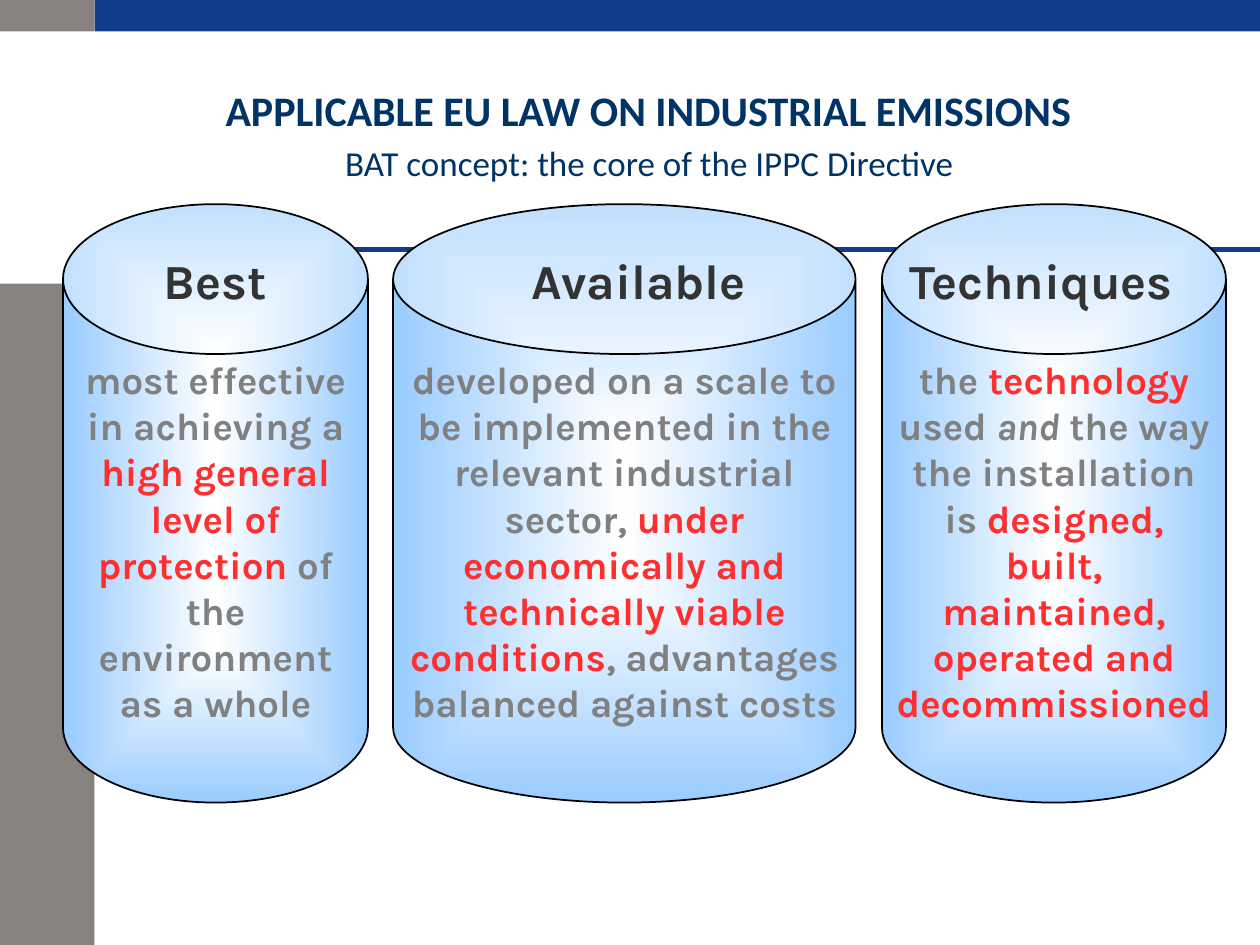
from lxml import etree
from pptx import Presentation
from pptx.dml.color import RGBColor
from pptx.enum.shapes import MSO_CONNECTOR, MSO_SHAPE
from pptx.enum.text import MSO_ANCHOR, MSO_AUTO_SIZE, PP_ALIGN
from pptx.oxml.ns import qn
from pptx.util import Inches, Pt

RECT, CAN = MSO_SHAPE.RECTANGLE, MSO_SHAPE.CAN
STRAIGHT = MSO_CONNECTOR.STRAIGHT
MIDDLE, TOP = MSO_ANCHOR.MIDDLE, MSO_ANCHOR.TOP
LEFT, CENTER = PP_ALIGN.LEFT, PP_ALIGN.CENTER
FIT, FIXED = MSO_AUTO_SIZE.SHAPE_TO_FIT_TEXT, MSO_AUTO_SIZE.NONE

WIDTH, HEIGHT = 10, 7.5
BAND, SIDEBAR, SIDEBAR_TOP, RULE_Y = 0.25, 0.75, 2.25, 1.98
CAN_TOP, CAN_HEIGHT, LID_HEIGHT = 1.62, 4.75, 1.19
LABEL_TOP, LABEL_HEIGHT = 1.94, 0.57

NAVY, BLUE, STONE = "003366", "133C8B", "88827E"
GREY, RED, DARK = "808080", "FF2F2F", "333333"
CAN_GRADIENT = ("FFFFFF", "99CCFF")

TITLE = "APPLICABLE EU LAW ON INDUSTRIAL EMISSIONS"
SUBTITLE = "BAT concept: the core of the IPPC Directive"

PILLARS = [
    {"label": "Best", "left": 0.5, "width": 2.42, "label_left": 1.2, "label_width": 1.05,
     "definition": [
         ("most effective in achieving a ", GREY, False),
         ("high general level of protection ", RED, False),
         ("of the environment as a whole", GREY, False)]},
    {"label": "Available", "left": 3.12, "width": 3.67, "label_left": 4.12, "label_width": 1.91,
     "definition": [
         ("developed on a scale to be implemented in the relevant industrial sector, ", GREY, False),
         ("under economically and technically viable conditions", RED, False),
         (", advantages balanced against costs", GREY, False)]},
    {"label": "Techniques", "left": 7, "width": 2.73, "label_left": 7.12, "label_width": 2.37,
     "definition": [
         ("the ", GREY, False),
         ("technology ", RED, False),
         ("used ", GREY, False),
         ("and", GREY, True),
         (" the way the installation is ", GREY, False),
         ("designed, built, maintained, operated and decommissioned", RED, False)]},
]


def rgb(value):
    return RGBColor.from_string(value)


def inches(*lengths):
    return [Inches(length) for length in lengths]


def style(font, name, size, bold, color=None):
    font.name, font.size, font.bold = name, Pt(size), bold
    if color:
        font.color.rgb = rgb(color)


def add_block(slide, color, *box):
    block = slide.shapes.add_shape(RECT, *inches(*box))
    block.shadow.inherit = False
    block.fill.solid()
    block.fill.fore_color.rgb = rgb(color)
    block.line.fill.background()


def add_rule(slide):
    rule = slide.shapes.add_connector(STRAIGHT, *inches(SIDEBAR, RULE_Y, WIDTH, RULE_Y))
    rule.line.color.rgb = rgb(BLUE)
    rule.line.width = Pt(3)
    etree.SubElement(rule._element.spPr, qn("a:effectLst"))


def fill_from_center(shape):
    shape.fill.gradient()
    for stop, color in zip(shape.fill.gradient_stops, CAN_GRADIENT):
        stop.color.rgb = rgb(color)
    gradient = shape._element.spPr.find(qn("a:gradFill"))
    gradient.remove(gradient.find(qn("a:lin")))
    center = etree.SubElement(gradient, qn("a:path"), path="rect")
    etree.SubElement(center, qn("a:fillToRect"), {side: "50000" for side in "ltrb"})


def add_can(slide, pillar):
    can = slide.shapes.add_shape(
        CAN, *inches(pillar["left"], CAN_TOP, pillar["width"], CAN_HEIGHT))
    can.adjustments[0] = LID_HEIGHT / pillar["width"]
    can.shadow.inherit = False
    fill_from_center(can)
    can.line.color.rgb = rgb("000000")
    can.line.width = Pt(1)
    frame = can.text_frame
    frame.word_wrap, frame.vertical_anchor = True, MIDDLE
    paragraph = frame.paragraphs[0]
    paragraph.alignment = CENTER
    style(paragraph.font, "Karla", 22, True)
    for words, color, italic in pillar["definition"]:
        run = paragraph.add_run()
        run.text = words
        run.font.color.rgb = rgb(color)
        if italic:
            run.font.italic = True


def write(shape, words, anchor, wrap, fit, *font):
    frame = shape.text_frame
    frame.text = words
    frame.word_wrap, frame.auto_size, frame.vertical_anchor = wrap, fit, anchor
    paragraph = frame.paragraphs[0]
    paragraph.alignment = LEFT
    style(paragraph.font, *font)


def main():
    deck = Presentation()
    deck.slide_width, deck.slide_height = inches(WIDTH, HEIGHT)
    slide = deck.slides.add_slide(deck.slide_layouts[5])

    add_block(slide, STONE, 0, SIDEBAR_TOP, SIDEBAR, HEIGHT - SIDEBAR_TOP)
    add_block(slide, STONE, 0, 0, SIDEBAR, BAND)
    add_block(slide, BLUE, SIDEBAR, 0, WIDTH - SIDEBAR, BAND)
    add_rule(slide)

    title = slide.shapes.title
    title.left, title.top, title.width, title.height = inches(1.69, 0.44, 7.14, 0.86)
    write(title, TITLE, MIDDLE, True, FIXED, "Calibri", 24, True, NAVY)
    subtitle = slide.shapes.add_textbox(*inches(2.64, 1.07, 5.35, 0.44))
    write(subtitle, SUBTITLE, TOP, True, FIT, "Calibri", 20, False, NAVY)

    for pillar in PILLARS:
        add_can(slide, pillar)
        label = slide.shapes.add_textbox(
            *inches(pillar["label_left"], LABEL_TOP, pillar["label_width"], LABEL_HEIGHT))
        write(label, pillar["label"], TOP, False, FIT, "Karla", 28, True, DARK)

    deck.save("out.pptx")


if __name__ == "__main__":
    main()
